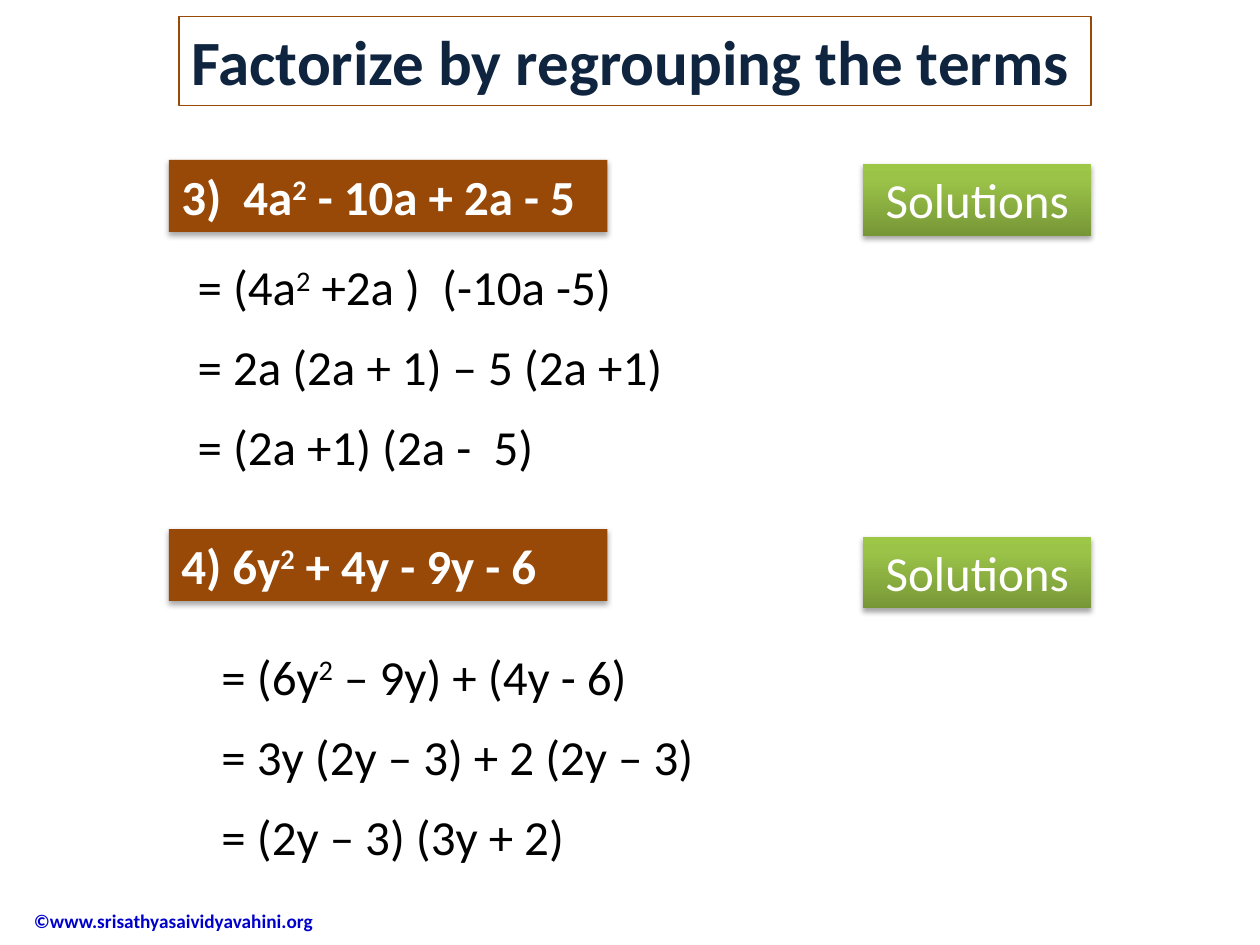
from copy import deepcopy

from lxml.etree import SubElement
from pptx import Presentation
from pptx.dml.color import RGBColor
from pptx.enum.shapes import MSO_SHAPE as Shape
from pptx.enum.text import MSO_ANCHOR as Anchor, PP_ALIGN as Align
from pptx.oxml.ns import qn
from pptx.util import Inches, Pt

BROWN = "984807"
GREEN_STOPS = [(0, "779737"), (0.8, "9BC348"), (1, "9DC746")]


def color(hex_string):
    return RGBColor.from_string(hex_string)


def add_math_runs(paragraph, text):
    """Add text to a paragraph; the character after each ^ is raised."""
    first, *raised_parts = text.split("^")
    paragraph.add_run().text = first
    for part in raised_parts:
        exponent = paragraph.add_run()
        exponent.text = part[0]
        exponent._r.get_or_add_rPr().set("baseline", "30000")
        paragraph.add_run().text = part[1:]


def write_lines(shape, lines, size, font_color, bold=False, align=Align.LEFT,
                gap=0, anchor=Anchor.TOP):
    frame = shape.text_frame
    frame.word_wrap = True
    frame.vertical_anchor = anchor
    for index, line in enumerate(lines):
        paragraph = frame.add_paragraph() if index else frame.paragraphs[0]
        add_math_runs(paragraph, line)
        paragraph.alignment = align
        if index:
            paragraph.space_before = Pt(gap)
        paragraph.space_after = Pt(gap)
        paragraph.font.name = "Calibri"
        paragraph.font.size = Pt(size)
        paragraph.font.bold = bold
        paragraph.font.color.rgb = color(font_color)


def add_text(slide, left, top, width, height, lines, **style):
    box = slide.shapes.add_textbox(
        Inches(left), Inches(top), Inches(width), Inches(height))
    write_lines(box, lines, **style)


def add_rectangle(slide, left, top, width, height):
    shape = slide.shapes.add_shape(
        Shape.RECTANGLE, Inches(left), Inches(top), Inches(width), Inches(height))
    shape.shadow.inherit = False
    return shape


def add_drop_shadow(shape):
    effects = shape._element.spPr.find(qn("a:effectLst"))
    shadow = SubElement(effects, qn("a:outerShdw"), blurRad=str(Pt(3.1)),
                        dist=str(Pt(1.8)), dir="5400000", rotWithShape="0")
    black = SubElement(shadow, qn("a:srgbClr"), val="000000")
    SubElement(black, qn("a:alpha"), val="35000")


def fill_gradient(shape, stops):
    """Fill from bottom to top through any number of stops."""
    shape.fill.gradient()
    shape.fill.gradient_angle = 90
    stop_list = shape._element.spPr.find(qn("a:gradFill")).find(qn("a:gsLst"))
    while len(stop_list) < len(stops):
        stop_list.append(deepcopy(stop_list[-1]))
    for stop, (position, hex_string) in zip(shape.fill.gradient_stops, stops):
        stop.position = position
        stop.color.rgb = color(hex_string)


def add_title(slide, text):
    shape = add_rectangle(slide, 1.42, 0.13, 7.24, 0.71)
    shape.fill.background()
    shape.line.color.rgb = color(BROWN)
    shape.line.width = Pt(0.75)
    write_lines(shape, [text], size=36, font_color="0F243E", bold=True)


def add_problem(slide, top, text):
    shape = add_rectangle(slide, 1.34, top, 3.48, 0.57)
    shape.fill.solid()
    shape.fill.fore_color.rgb = color(BROWN)
    shape.line.fill.background()
    add_drop_shadow(shape)
    write_lines(shape, [text], size=28, font_color="FFFFFF", bold=True)


def add_solutions_button(slide, top):
    shape = add_rectangle(slide, 6.85, top, 1.81, 0.57)
    fill_gradient(shape, GREEN_STOPS)
    shape.line.fill.background()
    add_drop_shadow(shape)
    write_lines(shape, ["Solutions"], size=28, font_color="FFFFFF",
                align=Align.CENTER)


def add_steps(slide, left, top, lines):
    add_text(slide, left, top, 4.03, 1.85, lines, size=28,
             font_color="000000", align=Align.JUSTIFY, gap=6)


def main():
    presentation = Presentation()
    presentation.slide_width = Inches(10)
    presentation.slide_height = Inches(7.5)
    slide = presentation.slides.add_slide(presentation.slide_layouts[6])

    add_text(slide, 0.17, 7.1, 2.6, 0.41, ["©www.srisathyasaividyavahini.org"],
             size=11, font_color="0000CC", bold=True, anchor=Anchor.MIDDLE)
    add_title(slide, "Factorize by regrouping the terms")

    add_problem(slide, 1.27, "3)  4a^2 - 10a + 2a - 5")
    add_steps(slide, 1.47, 1.99, [
        "= (4a^2 +2a )  (-10a -5)",
        "= 2a (2a + 1) – 5 (2a +1)",
        "= (2a +1) (2a -  5)",
    ])
    add_problem(slide, 4.2, "4) 6y^2 + 4y - 9y - 6")
    add_steps(slide, 1.66, 5.08, [
        "= (6y^2 – 9y) + (4y - 6)",
        "= 3y (2y – 3) + 2 (2y – 3)",
        "= (2y – 3) (3y + 2)",
    ])
    for top in (1.3, 4.26):
        add_solutions_button(slide, top)

    presentation.save("out.pptx")


if __name__ == "__main__":
    main()
